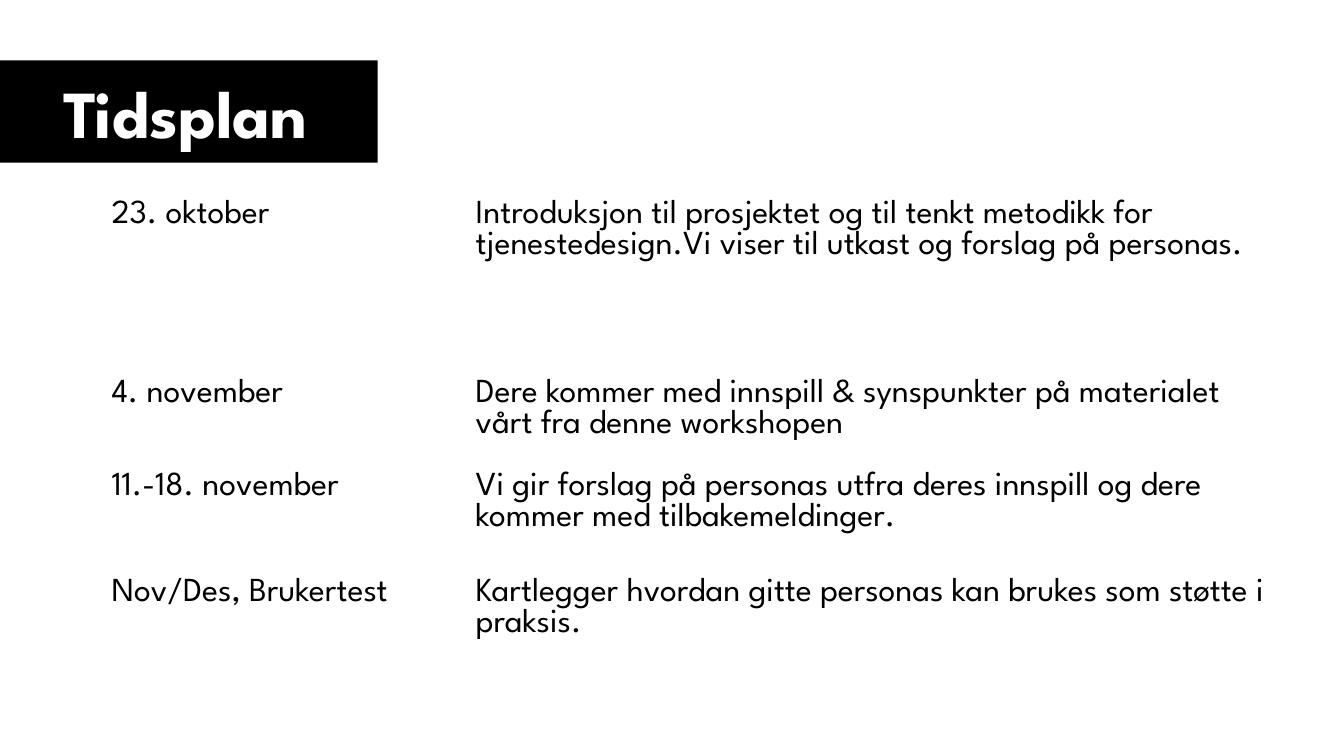
from dataclasses import dataclass

from pptx import Presentation
from pptx.dml.color import RGBColor
from pptx.enum.text import MSO_ANCHOR, MSO_AUTO_SIZE, PP_ALIGN
from pptx.util import Inches, Pt


@dataclass(frozen=True)
class Theme:
    font: str = "League Spartan"
    ink: RGBColor = RGBColor(0, 0, 0)
    paper: RGBColor = RGBColor(255, 255, 255)
    head: Pt = Pt(36)
    body: Pt = Pt(18)
    line: float = 16.5  # height of one body line in points


THEME = Theme()
WIDTH = Inches(10)
COLS = (2.71, 6.16)
ROWS = (1.33, 1.48, 1.32)

# Each cell lists its paragraphs with the empty lines kept above them
PLAN = [
    ([("23. oktober", 0)],
     [("Introduksjon til prosjektet og til tenkt metodikk for "
       "tjenestedesign.Vi viser til utkast og forslag på personas.", 0)]),
    ([("4. november", 0), ("11.-18. november", 2)],
     [("Dere kommer med innspill & synspunkter på materialet vårt "
       "fra denne workshopen", 0),
      ("Vi gir forslag på personas utfra deres innspill og dere "
       "kommer med tilbakemeldinger.", 1)]),
    ([("Nov/Des, Brukertest", 0)],
     [("Kartlegger hvordan gitte personas kan brukes som støtte "
       "i praksis.", 0)]),
]


def apply(item, **values):
    for name, value in values.items():
        setattr(item, name, value)


def style(para, size, color, bold=False):
    apply(para.font, name=THEME.font, size=size, bold=bold)
    para.font.color.rgb = color


def add_title(slide, text, left, top, width, height):
    title = slide.shapes.title
    apply(title, left=Inches(left), top=Inches(top),
          width=Inches(width), height=Inches(height))
    title.fill.solid()
    title.fill.fore_color.rgb = THEME.ink
    frame = title.text_frame
    apply(frame, text=text, word_wrap=True, auto_size=MSO_AUTO_SIZE.NONE,
          vertical_anchor=MSO_ANCHOR.MIDDLE,
          margin_left=Inches(0.47), margin_right=Inches(0.35),
          margin_top=Inches(0.08), margin_bottom=Inches(0.08))
    para = frame.paragraphs[0]
    para.alignment = PP_ALIGN.LEFT
    style(para, THEME.head, THEME.paper, bold=True)


def fill_cell(cell, items):
    cell.fill.background()
    frame = cell.text_frame
    for i, (text, gap) in enumerate(items):
        para = frame.add_paragraph() if i else frame.paragraphs[0]
        para.text = text
        if gap:
            para.space_before = Pt(gap * THEME.line)
        style(para, THEME.body, THEME.ink)


def add_plan(slide, left, top):
    table = slide.shapes.add_table(
        len(ROWS), len(COLS), Inches(left), Inches(top),
        Inches(sum(COLS)), Inches(sum(ROWS))).table
    apply(table, first_row=False, horz_banding=False)
    for col, width in zip(table.columns, COLS):
        col.width = Inches(width)
    for row, height, cells in zip(table.rows, ROWS, PLAN):
        row.height = Inches(height)
        for cell, items in zip(row.cells, cells):
            fill_cell(cell, items)


def main():
    deck = Presentation()
    # Widescreen, 16 to 9
    apply(deck, slide_width=WIDTH, slide_height=WIDTH * 9 // 16)
    slide = deck.slides.add_slide(deck.slide_layouts[5])
    slide.background.fill.solid()
    slide.background.fill.fore_color.rgb = THEME.paper

    # Heading band
    add_title(slide, "Tidsplan", 0, 0.45, 2.81, 0.76)
    # Dates and tasks
    add_plan(slide, 0.73, 1.44)

    deck.save("out.pptx")


if __name__ == "__main__":
    main()
